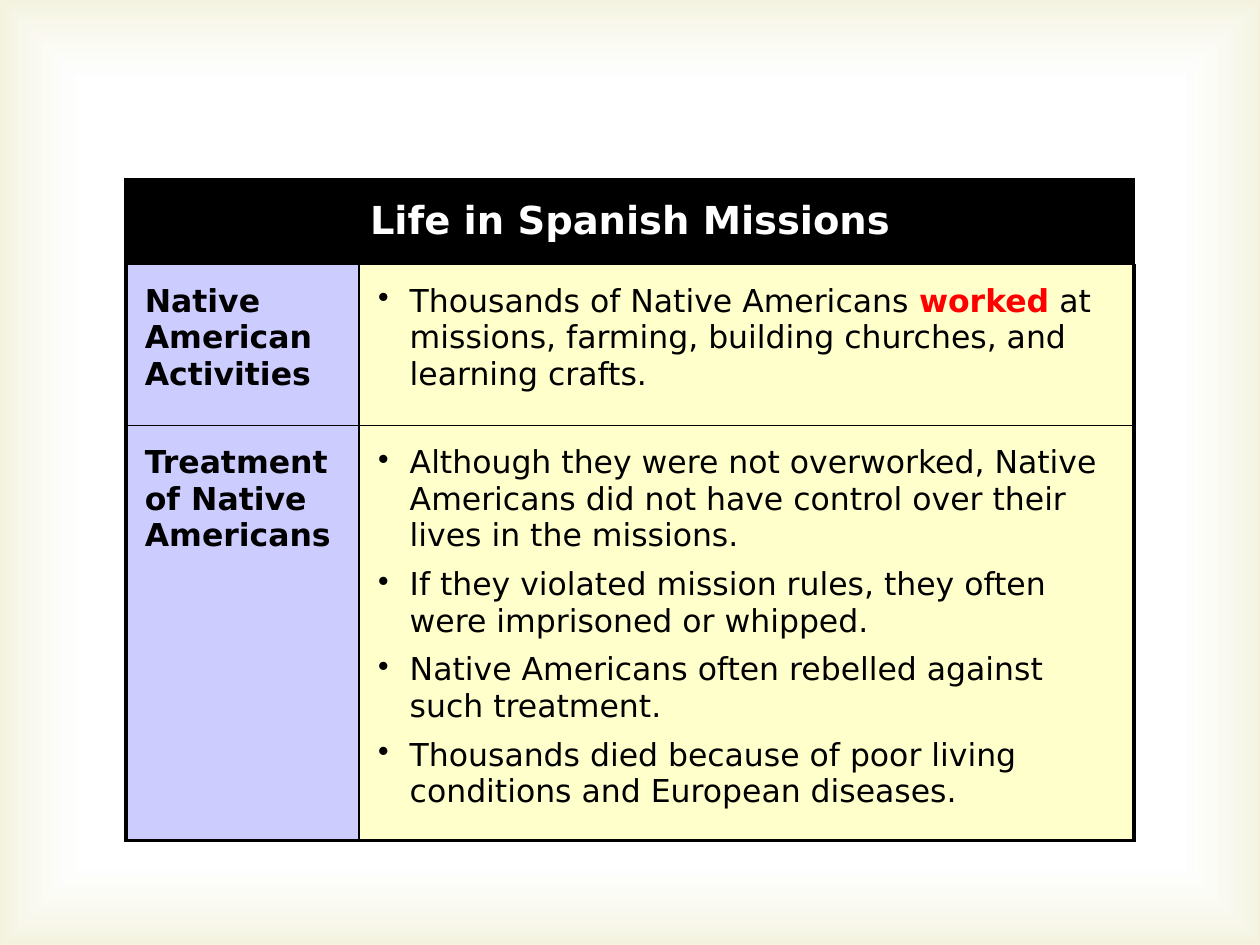
from dataclasses import dataclass

from pptx import Presentation
from pptx.dml.color import RGBColor
from pptx.enum.shapes import MSO_SHAPE
from pptx.enum.text import MSO_ANCHOR, PP_ALIGN
from pptx.oxml import parse_xml
from pptx.oxml.ns import nsdecls, qn
from pptx.util import Cm, Pt

RECTANGLE = MSO_SHAPE.RECTANGLE
TOP = MSO_ANCHOR.TOP
LEFT, CENTER = PP_ALIGN.LEFT, PP_ALIGN.CENTER


@dataclass(frozen=True)
class Theme:
    font: str = "DejaVu Sans"
    title_size: float = 22
    body_size: float = 18
    black: str = "000000"
    white: str = "FFFFFF"
    accent: str = "FF0000"
    label_fill: str = "CCCCFF"
    detail_fill: str = "FFFFCC"
    vignette: str = "D1CA75"
    outer_line: float = 2.25
    inner_line: float = 1


class SlideBuilder:
    def __init__(self, page, theme):
        self.page = page
        self.theme = theme

    def vignette(self, width, height):
        shape = self.page.shapes.add_shape(RECTANGLE, 0, 0, width, height)
        shape.shadow.inherit = False
        shape.fill.background()
        shape.line.fill.background()
        gradient = parse_xml(
            f'<a:gradFill {nsdecls("a")} rotWithShape="1"><a:gsLst>'
            f'<a:gs pos="83000"><a:srgbClr val="{self.theme.white}">'
            '<a:alpha val="11000"/></a:srgbClr></a:gs>'
            f'<a:gs pos="100000"><a:srgbClr val="{self.theme.vignette}">'
            '<a:alpha val="23000"/></a:srgbClr></a:gs></a:gsLst>'
            '<a:path path="rect"><a:fillToRect l="50000" t="50000" '
            'r="50000" b="50000"/></a:path></a:gradFill>')
        properties = shape._element.spPr
        properties.replace(properties.find(qn("a:noFill")), gradient)

    def table(self, left, top, widths, heights):
        frame = self.page.shapes.add_table(
            len(heights), len(widths), left, top, sum(widths), sum(heights))
        table = frame.table
        table.first_row = False
        table.horz_banding = False
        for column, width in zip(table.columns, widths):
            column.width = width
        for row, height in zip(table.rows, heights):
            row.height = height
        last_row, last_column = len(heights) - 1, len(widths) - 1
        for r in range(len(heights)):
            for c in range(len(widths)):
                self.borders(table.cell(r, c), {
                    "L": c == 0, "R": c == last_column,
                    "T": r == 0, "B": r == last_row})
        return table

    def borders(self, cell, outer_sides):
        properties = cell._tc.get_or_add_tcPr()
        for side, is_outer in outer_sides.items():
            points = self.theme.outer_line if is_outer else self.theme.inner_line
            properties.append(parse_xml(
                f'<a:ln{side} {nsdecls("a")} w="{Pt(points)}"><a:solidFill>'
                f'<a:srgbClr val="{self.theme.black}"/></a:solidFill></a:ln{side}>'))

    def cell(self, cell, fill, paragraphs, size, color, bold=False,
             align=LEFT, bulleted=False):
        cell.fill.solid()
        cell.fill.fore_color.rgb = RGBColor.from_string(fill)
        cell.vertical_anchor = TOP
        cell.margin_left = cell.margin_right = Cm(0.38)
        cell.margin_top = cell.margin_bottom = Cm(0.38)
        frame = cell.text_frame
        for index, pieces in enumerate(paragraphs):
            para = frame.add_paragraph() if index else frame.paragraphs[0]
            para.alignment = align
            if bulleted:
                self.bullet(para)
            for text, is_key in pieces:
                span = para.add_run()
                span.text = text
                span.font.name = self.theme.font
                span.font.size = Pt(size)
                span.font.bold = bold or is_key
                span.font.color.rgb = RGBColor.from_string(
                    self.theme.accent if is_key else color)

    def bullet(self, para):
        properties = para._p.get_or_add_pPr()
        properties.set("marL", str(Cm(0.64)))
        properties.set("indent", str(-Cm(0.64)))
        properties.append(parse_xml(f'<a:buChar {nsdecls("a")} char="•"/>'))
        para.space_after = Pt(7)


def plain(*texts):
    return [[(text, False)] for text in texts]


def main():
    deck = Presentation()
    deck.slide_width, deck.slide_height = Cm(25.4), Cm(19.05)
    theme = Theme()
    builder = SlideBuilder(deck.slides.add_slide(deck.slide_layouts[6]), theme)
    builder.vignette(deck.slide_width, deck.slide_height)

    table = builder.table(Cm(2.54), Cm(3.63), [Cm(4.7), Cm(15.62)],
                          [Cm(1.7), Cm(3.25), Cm(8.36)])
    table.cell(0, 0).merge(table.cell(0, 1))
    builder.cell(table.cell(0, 0), theme.black, plain("Life in Spanish Missions"),
                 theme.title_size, theme.white, bold=True, align=CENTER)

    topics = [
        ("Native American Activities", [[
            ("Thousands of Native Americans ", False),
            ("worked", True),
            (" at missions, farming, building churches, and learning crafts.", False),
        ]]),
        ("Treatment of Native Americans", plain(
            "Although they were not overworked, Native Americans did not have "
            "control over their lives in the missions.",
            "If they violated mission rules, they often were imprisoned or whipped.",
            "Native Americans often rebelled against such treatment.",
            "Thousands died because of poor living conditions and European diseases.",
        )),
    ]
    for row, (label, details) in enumerate(topics, start=1):
        builder.cell(table.cell(row, 0), theme.label_fill, plain(label),
                     theme.body_size, theme.black, bold=True)
        builder.cell(table.cell(row, 1), theme.detail_fill, details,
                     theme.body_size, theme.black, bulleted=True)

    deck.save("out.pptx")


if __name__ == "__main__":
    main()
